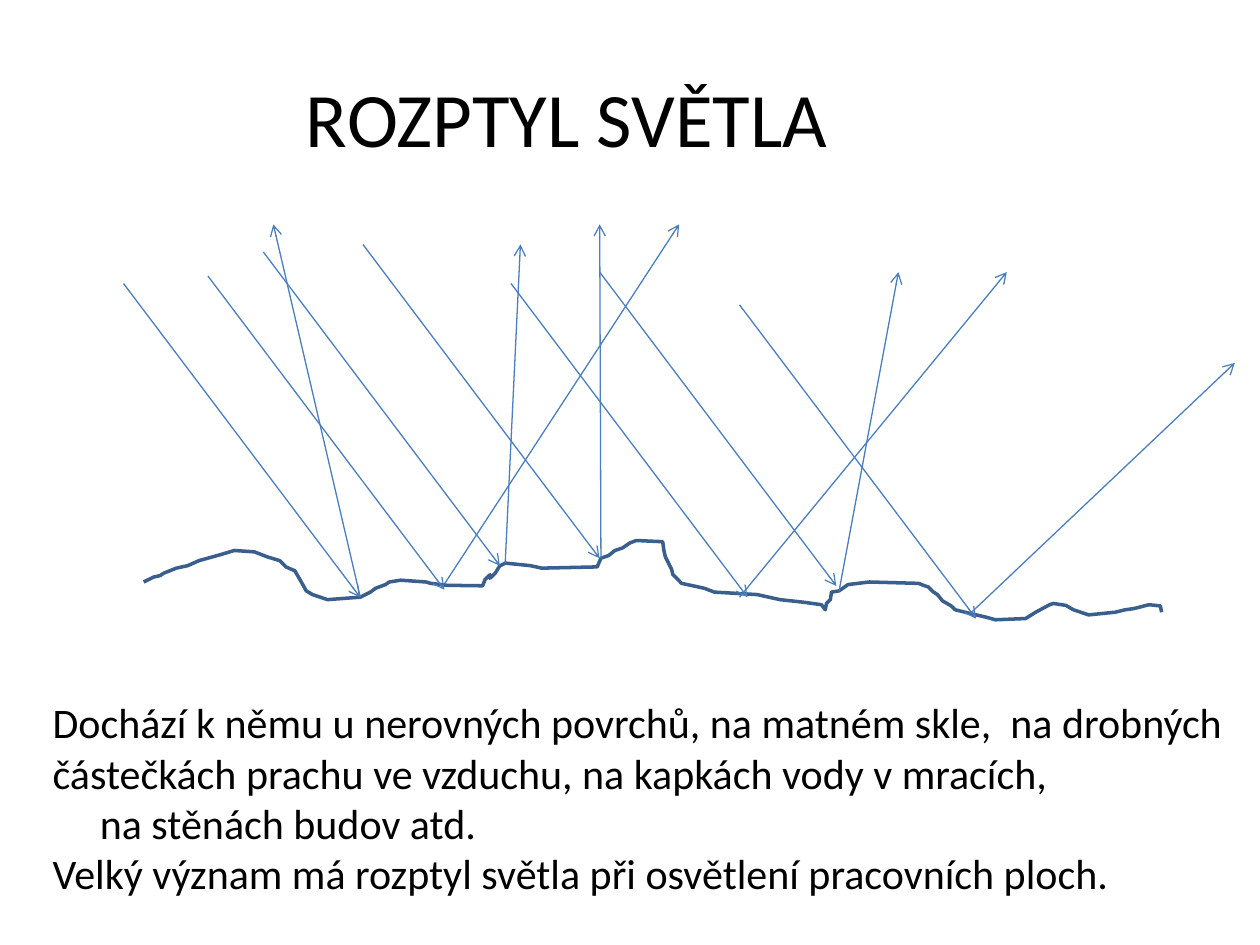
"""Build a slide on how an uneven surface scatters parallel light rays."""
from dataclasses import dataclass

from lxml.etree import SubElement
from pptx import Presentation
from pptx.dml.color import RGBColor
from pptx.enum.shapes import MSO_CONNECTOR
from pptx.enum.text import MSO_ANCHOR, PP_ALIGN
from pptx.oxml.ns import qn
from pptx.slide import Slide
from pptx.util import Pt

BLACK = RGBColor(0x00, 0x00, 0x00)
RAY_BLUE = RGBColor(0x4B, 0x7E, 0xBC)
SURFACE_BLUE = RGBColor(0x3A, 0x5F, 0x8C)
FONT = "Calibri"


@dataclass(frozen=True)
class Ray:
    x1: float
    y1: float
    x2: float
    y2: float


@dataclass(frozen=True)
class Line:
    text: str
    indent: float = 0


INCIDENT_DX, INCIDENT_DY = 135.2, 179.3
INCIDENT_STARTS = [
    (70.6, 162), (422.6, 174.2), (150.5, 144), (342.7, 155.5),
    (118.8, 157.7), (207.4, 139.7), (292, 162),
]
INCIDENT = [Ray(x, y, x + INCIDENT_DX, y + INCIDENT_DY) for x, y in INCIDENT_STARTS]
REFLECTED = [
    Ray(205.9, 341.3, 156.2, 128.2),
    Ray(254.2, 333.4, 388.1, 128.2),
    Ray(288.7, 321.8, 297.4, 139.7),
    Ray(343.4, 319, 342.7, 128.2),
    Ray(422.6, 341.3, 575.3, 155.5),
    Ray(479.5, 337.7, 513.4, 155.5),
    Ray(554.4, 350.6, 705.6, 207.4),
]
SURFACE = [
    (82.1, 332.6), (87.8, 329.8), (91.4, 329), (93.6, 327.6), (100.8, 324.7),
    (107.3, 323.3), (113.8, 320.4), (118.8, 319), (126.7, 316.8), (133.9, 314.6),
    (145.4, 315.4), (152.6, 318.2), (159.8, 320.4), (163.4, 324), (168.5, 326.2),
    (171.4, 331.2), (175, 337.7), (178.6, 339.8), (187.2, 342.7), (205.9, 341.3),
    (211.7, 338.4), (214.6, 336.2), (220.3, 334.1), (222.5, 332.6), (229, 331.6),
    (243.4, 332.6), (246.2, 333.4), (255.6, 334.5), (275.8, 334.8), (277.2, 331.2),
    (280, 328.5), (280, 330.5), (283, 327.6), (285.5, 323.5), (288.7, 321.8),
    (303.1, 323.3), (309.6, 324.7), (341.3, 324), (343.4, 319), (347.8, 317.5),
    (351.4, 314.6), (355.7, 313.2), (360, 310.3), (363.6, 308.9), (378.7, 309.6),
    (379.4, 314.6), (380.2, 318.2), (383.8, 325.4), (384.5, 328.3), (389.5, 333.4),
    (396, 334.8), (402.5, 336.2), (408.2, 338.4), (432.7, 339.8), (445.7, 342.7),
    (459.4, 344.2), (469.4, 345.6), (471.6, 348.5), (472.3, 344.9), (474.5, 342.7),
    (475.2, 338.4), (479.5, 337.7), (484.6, 334.1), (496.8, 332.6), (524.9, 333.4),
    (528.5, 334.8), (530.6, 335.5), (533.5, 338.4), (535.7, 339.8), (538.6, 343.4),
    (543.6, 346.3), (545.8, 348.5), (554.4, 350.6), (563.8, 352.8), (568.8, 354.2),
    (586.1, 353.5), (591.8, 349.9), (599.8, 345.6), (601.9, 344.9), (609.1, 346),
    (613.4, 348.5), (622.1, 351.4), (637.2, 349.9), (643, 348.5), (648, 347.8),
    (656.6, 345.6), (663.1, 346.3), (663.8, 349.9),
]
LINES = [
    Line("Dochází k němu u nerovných povrchů, na matném skle,  na drobných "
         "částečkách prachu ve vzduchu, na kapkách vody v mracích,"),
    Line("na stěnách budov atd.", indent=27),
    Line("Velký význam má rozptyl světla při osvětlení pracovních ploch."),
]


def format_paragraph(p, size: float) -> None:
    """Set the slide's font on a paragraph."""
    p.font.name = FONT
    p.font.size = Pt(size)
    p.font.color.rgb = BLACK


def add_title(slide: Slide, text: str) -> None:
    """Place and fill the title placeholder."""
    sp = slide.shapes.title
    sp.left, sp.top, sp.width, sp.height = Pt(0), Pt(21.6), Pt(648), Pt(90)
    tf = sp.text_frame
    tf.text = text
    tf.vertical_anchor = MSO_ANCHOR.MIDDLE
    p = tf.paragraphs[0]
    p.alignment = PP_ALIGN.CENTER
    format_paragraph(p, 44)


def add_surface(slide: Slide, points: list[tuple[float, float]]) -> None:
    """Draw the uneven surface as an open outline."""
    start, *rest = [(Pt(x), Pt(y)) for x, y in points]
    builder = slide.shapes.build_freeform(*start)
    builder.add_line_segments(rest, close=False)
    sp = builder.convert_to_shape()
    sp.shadow.inherit = False
    sp.fill.background()
    sp.line.color.rgb = SURFACE_BLUE
    sp.line.width = Pt(2)


def add_ray(slide: Slide, ray: Ray) -> None:
    """Draw one light ray with an arrowhead at its end."""
    cxn = slide.shapes.add_connector(
        MSO_CONNECTOR.STRAIGHT, Pt(ray.x1), Pt(ray.y1), Pt(ray.x2), Pt(ray.y2))
    cxn.line.color.rgb = RAY_BLUE
    cxn.line.width = Pt(0.75)
    sp_pr = cxn.line._get_or_add_ln().getparent()
    SubElement(cxn.line._get_or_add_ln(), qn("a:tailEnd"), type="arrow")
    SubElement(sp_pr, qn("a:effectLst"))


def add_explanation(slide: Slide, lines: list[Line]) -> None:
    """Write the explanation below the diagram."""
    sp = slide.shapes.add_textbox(Pt(23), Pt(394.6), Pt(686.2), Pt(123.8))
    tf = sp.text_frame
    tf.word_wrap = True
    for i, line in enumerate(lines):
        p = tf.add_paragraph() if i else tf.paragraphs[0]
        p.text = line.text
        format_paragraph(p, 24)
        if line.indent:
            p._p.get_or_add_pPr().set("marL", str(Pt(line.indent)))


def main() -> None:
    """Build and save the slide."""
    prs = Presentation()
    prs.slide_width, prs.slide_height = Pt(720), Pt(540)
    slide = prs.slides.add_slide(prs.slide_layouts[5])
    add_title(slide, "ROZPTYL SVĚTLA")
    add_surface(slide, SURFACE)
    for ray in INCIDENT + REFLECTED:
        add_ray(slide, ray)
    add_explanation(slide, LINES)
    prs.save("out.pptx")


if __name__ == "__main__":
    main()
